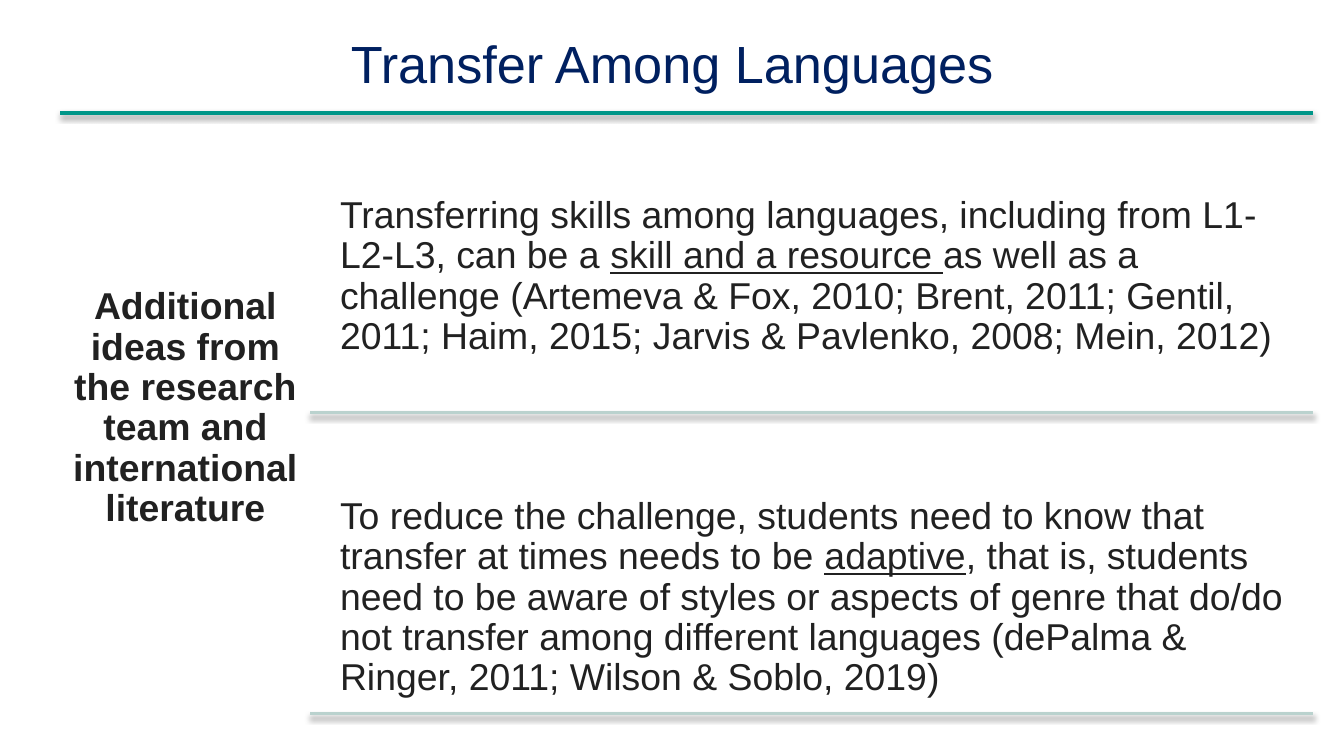
from lxml import etree
from pptx import Presentation
from pptx.dml.color import RGBColor
from pptx.enum.shapes import MSO_CONNECTOR as Connector
from pptx.enum.text import MSO_ANCHOR as Anchor, MSO_AUTO_SIZE as AutoSize, PP_ALIGN as Align
from pptx.util import Inches, Pt

INK = "212121"
SHADOW = """<a:effectLst xmlns:a="http://schemas.openxmlformats.org/drawingml/2006/main">
  <a:outerShdw blurRad="39400" dist="20300" dir="5400000" rotWithShape="0">
    <a:srgbClr val="000000"><a:alpha val="38000"/></a:srgbClr>
  </a:outerShdw></a:effectLst>"""


def color(value):
    return RGBColor.from_string(value)


def write(box, place, spans, inset, top_inset, align, spacing, **styles):
    """Place a box and fill it with one paragraph of (text, underlined) spans."""
    box.left, box.top, box.width, box.height = [Inches(n) for n in place]
    frame = box.text_frame
    layout = {
        "word_wrap": True,
        "auto_size": AutoSize.NONE,
        "vertical_anchor": Anchor.TOP,
        "margin_left": Inches(inset),
        "margin_right": Inches(inset),
        "margin_bottom": Inches(inset),
        "margin_top": Inches(top_inset),
    }
    for name, value in layout.items():
        setattr(frame, name, value)
    para = frame.paragraphs[0]
    para.alignment = align
    para.line_spacing = spacing
    para.space_before = Pt(0)
    for text, underlined in spans:
        span = para.add_run()
        span.text = text
        formats = {"name": "Arial", "size": Pt(20), "underline": underlined} | styles
        ink = formats.pop("ink", INK)
        for name, value in formats.items():
            setattr(span.font, name, value)
        span.font.color.rgb = color(ink)


deck = Presentation()
deck.slide_width = Inches(10)
deck.slide_height = Inches(10 * 9 / 16)
page = deck.slides.add_slide(deck.slide_layouts[5])
page.background.fill.solid()
page.background.fill.fore_color.rgb = color("FFFFFF")

write(page.shapes.title, (0.34, 0.12, 9.32, 0.63),
      [("Transfer Among Languages", False)],
      0.1, 0.11, Align.CENTER, 1.0, size=Pt(28), ink="002060")

# Rules: one under the title, one under each idea
right, top, row_step = 9.77, 0.84, 2.24
for left, y, tint in [
    (0.45, top, "009688"),
    (2.31, 3.07, "BAD2CE"),
    (2.31, 3.07 + row_step, "BAD2CE"),
]:
    rule = page.shapes.add_connector(
        Connector.STRAIGHT, Inches(left), Inches(y), Inches(right), Inches(y))
    rule.line.color.rgb = color(tint)
    rule.line.width = Pt(2)
    rule._element.spPr.append(etree.fromstring(SHADOW))

heading = page.shapes.add_textbox(0, 0, 0, 0)
write(heading, (0.45, top, 1.86, 4.58),
      [("Additional ideas from the research team and international literature", False)],
      0.08, 1.3, Align.CENTER, 0.9, bold=True)

ideas = [
    [
        ("Transferring skills among languages, including from L1-L2-L3, can be a ", False),
        ("skill and a resource ", True),
        ("as well as a challenge (Artemeva & Fox, 2010; Brent, 2011; Gentil, 2011; "
         "Haim, 2015; Jarvis & Pavlenko, 2008; Mein, 2012)", False),
    ],
    [
        ("To reduce the challenge, students need to know that transfer at times "
         "needs to be ", False),
        ("adaptive", True),
        (", that is, students need to be aware of styles or aspects of genre that "
         "do/do not transfer among different languages (dePalma & Ringer, 2011; "
         "Wilson & Soblo, 2019)", False),
    ],
]
for row, spans in enumerate(ideas):
    idea = page.shapes.add_textbox(0, 0, 0, 0)
    write(idea, (2.45, 0.94 + row * row_step, 7.31, 2.13), spans,
          0.08, 0.52, Align.LEFT, 0.9)

deck.save("out.pptx")
